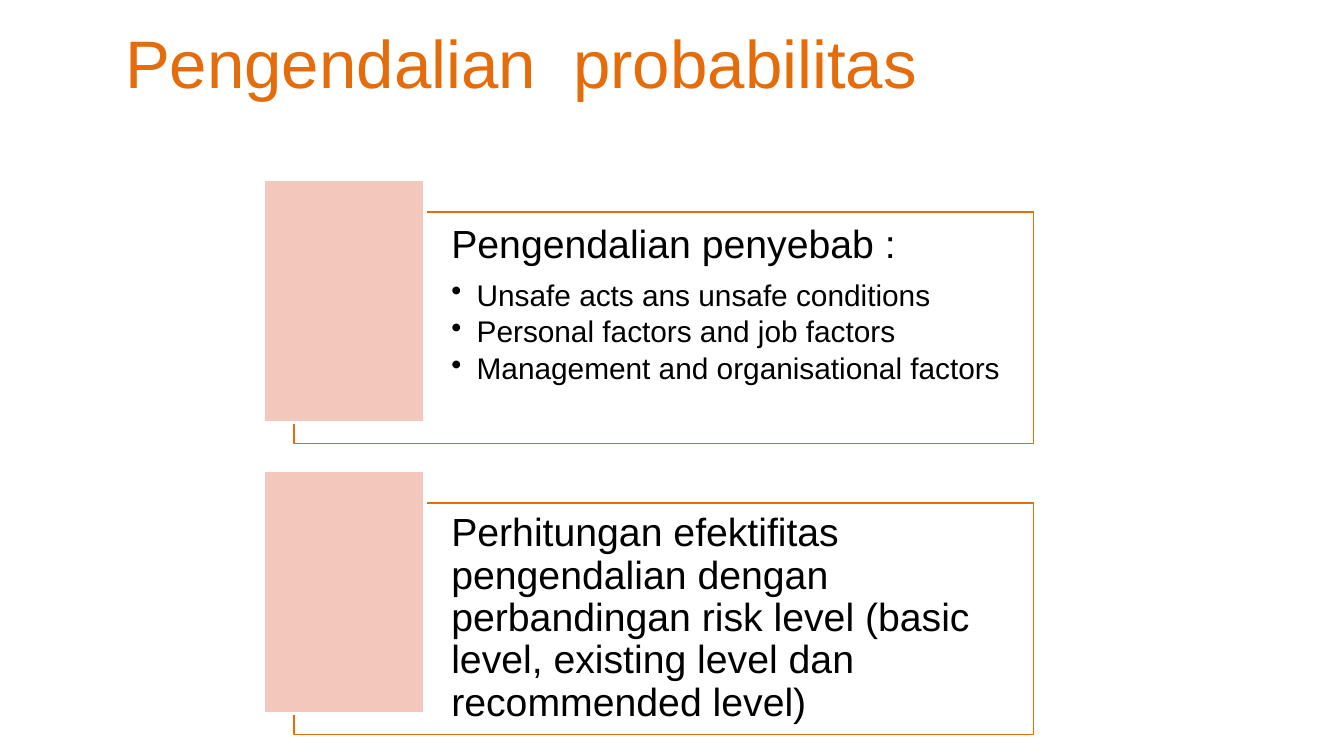
from lxml.etree import SubElement
from pptx import Presentation
from pptx.dml.color import RGBColor
from pptx.enum.shapes import MSO_SHAPE
from pptx.enum.text import MSO_ANCHOR, PP_ALIGN
from pptx.oxml.ns import qn
from pptx.util import Cm, Pt

FONT = "Arial"
ORANGE, PINK, WHITE, BLACK = "E46C0A", "F2C8BD", "FFFFFF", "000000"
TOP, STEP = 4.01, 5.5

# Each card: text anchor, heading, bullet points
CARDS = [
    (MSO_ANCHOR.TOP, "Pengendalian penyebab :", [
        "Unsafe acts ans unsafe conditions",
        "Personal factors and job factors",
        "Management and organisational factors",
    ]),
    (MSO_ANCHOR.MIDDLE,
     "Perhitungan efektifitas pengendalian dengan perbandingan risk level "
     "(basic level, existing level dan recommended level)", []),
]


def color(code):
    return RGBColor.from_string(code)


def write(para, text, size, tint=BLACK, after=0, lines=1.0, bullet=False):
    para.text = text
    para.alignment = PP_ALIGN.LEFT
    para.line_spacing = lines
    para.space_before = Pt(0)
    para.space_after = Pt(after)
    if bullet:
        props = para._p.get_or_add_pPr()
        props.set("marL", str(Cm(0.48)))
        props.set("indent", str(-Cm(0.48)))
        SubElement(props, qn("a:buChar"), char="•")
    para.font.name = FONT
    para.font.size = Pt(size)
    para.font.color.rgb = color(tint)


def add_title(slide, text):
    title = slide.shapes.title
    title.left, title.top = Cm(2.11), Cm(0.36)
    title.width, title.height = Cm(23.29), Cm(1.6)
    title.text_frame.vertical_anchor = MSO_ANCHOR.MIDDLE
    write(title.text_frame.paragraphs[0], text, 36, tint=ORANGE)


def add_box(slide, left, top, width, height, fill, line, weight):
    box = slide.shapes.add_shape(
        MSO_SHAPE.RECTANGLE, Cm(left), Cm(top), Cm(width), Cm(height))
    box.shadow.inherit = False
    box.fill.solid()
    box.fill.fore_color.rgb = color(fill)
    box.line.color.rgb = color(line)
    box.line.width = Pt(weight)
    return box


def add_card(slide, top, anchor, head, points):
    """Draw an outlined text box with a pink block over its left edge."""
    card = add_box(slide, 5.56, top, 13.97, 4.37, WHITE, ORANGE, 0.75)
    tint = card.fill._xPr.find(".//" + qn("a:srgbClr"))
    SubElement(tint, qn("a:alpha"), val="40000")
    frame = card.text_frame
    frame.word_wrap = True
    frame.vertical_anchor = anchor
    frame.margin_left = Cm(2.97)
    frame.margin_top = frame.margin_right = frame.margin_bottom = Cm(0.23)
    write(frame.paragraphs[0], head, 21, after=7.35, lines=0.9)
    for point in points:
        write(frame.add_paragraph(), point, 16, after=2.4, lines=0.9,
              bullet=True)
    add_box(slide, 4.98, top - 0.62, 3.05, 4.6, PINK, WHITE, 2)


def main():
    deck = Presentation()
    deck.slide_width, deck.slide_height = Cm(25.4), Cm(14.29)
    slide = deck.slides.add_slide(deck.slide_layouts[5])
    add_title(slide, "Pengendalian  probabilitas")
    for row, (anchor, head, points) in enumerate(CARDS):
        add_card(slide, TOP + row * STEP, anchor, head, points)
    deck.save("out.pptx")


if __name__ == "__main__":
    main()
